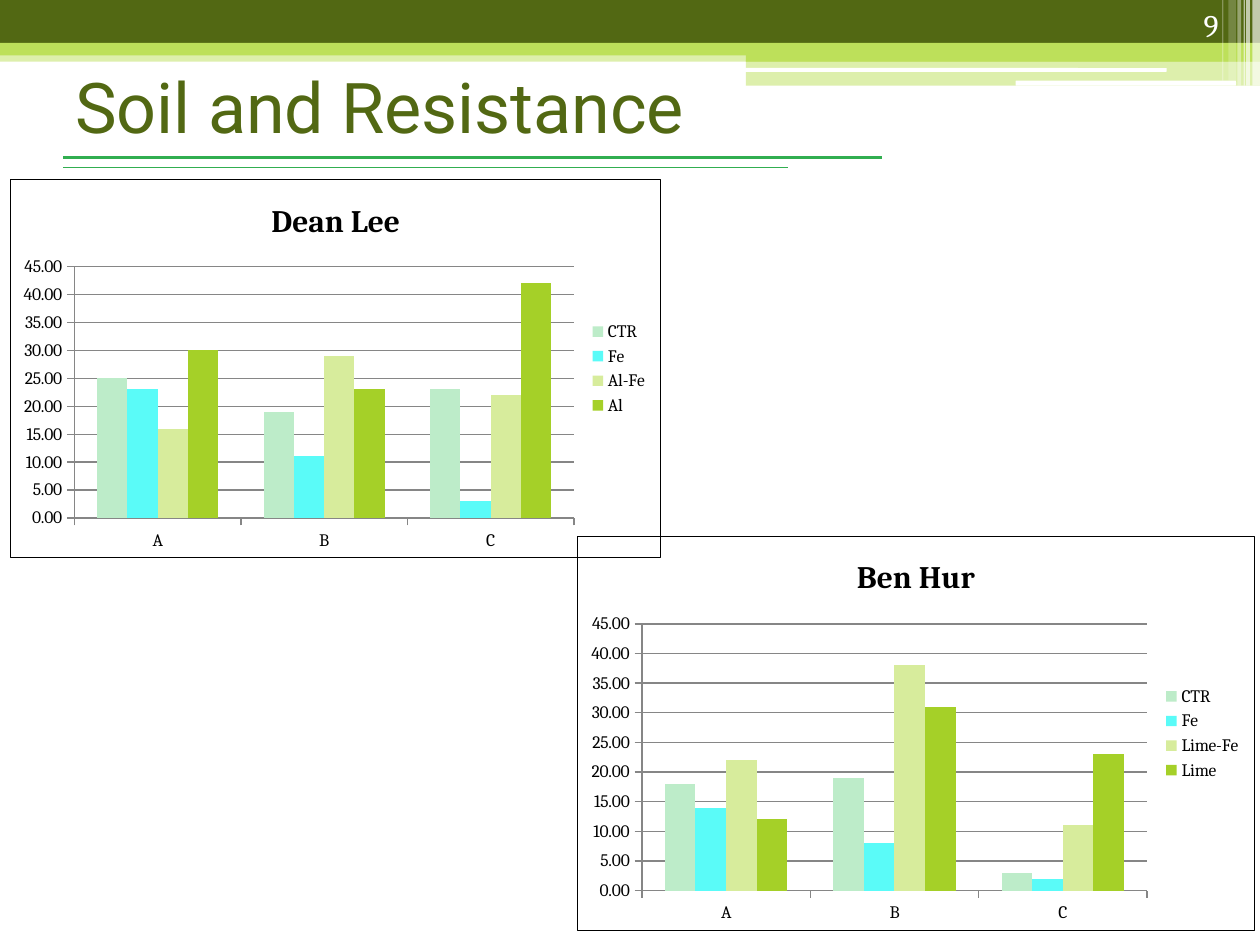
import pptx
import pptx.chart.data
import pptx.dml.color
import pptx.enum.chart
import pptx.enum.shapes
import pptx.enum.text
import pptx.oxml
import pptx.oxml.ns
import pptx.util
from pptx.util import Inches

COLORS = {
    "dark": "526813", "lime": "BDE05A", "white": "FFFFFF", "black": "000000",
    "rule": "31AE50", "axis": "868686",
}
SERIES_COLORS = ["BDECC9", "5AFBF8", "D7EC9C", "A5D028"]
NS = pptx.oxml.ns.nsdecls("a", "c")

# left, top, width, height, colour, opacity in percent
BANDS = [
    (0, 0.4, 10, 0.09, "lime", 50),
    (0, 0, 10, 0.34, "dark", 100),
    (0, 0.34, 10, 0.1, "lime", 100),
    (5.92, 0.39, 4.08, 0.1, "lime", 100),
    (5.92, 0.48, 4.08, 0.2, "lime", 50),
]
SLOTS = [(5.91, 0.54, 3.35, 0.03), (8.06, 0.64, 1.75, 0.04)]
# left, width, height, opacity in percent
STRIPES = [
    (9.94, 0.06, 0.68, 65), (9.89, 0.03, 0.68, 65), (9.87, 0.01, 0.68, 60),
    (9.82, 0.03, 0.68, 40), (9.75, 0.06, 0.64, 20), (9.7, 0.01, 0.64, 30),
]
DEAN_LEE = {
    "CTR": (25, 19, 23),
    "Fe": (23, 11, 3),
    "Al-Fe": (16, 29, 22),
    "Al": (30, 23, 42),
}
BEN_HUR = {
    "CTR": (18, 19, 3),
    "Fe": (14, 8, 2),
    "Lime-Fe": (22, 38, 11),
    "Lime": (12, 31, 23),
}


def rgb(value):
    return pptx.dml.color.RGBColor.from_string(value)


def add_block(s, box, color, opacity=100, rounded=False):
    kinds = pptx.enum.shapes.MSO_SHAPE
    kind = kinds.ROUNDED_RECTANGLE if rounded else kinds.RECTANGLE
    sp = s.shapes.add_shape(kind, *map(Inches, box))
    sp.shadow.inherit = False
    sp.line.fill.background()
    sp.fill.solid()
    sp.fill.fore_color.rgb = rgb(COLORS[color])
    if opacity < 100:
        clr = sp.fill._xPr.find(".//" + pptx.oxml.ns.qn("a:srgbClr"))
        clr.append(pptx.oxml.parse_xml(f'<a:alpha {NS} val="{opacity * 1000}"/>'))


def add_rule(shapes, y, right, width):
    line = shapes.add_connector(pptx.enum.shapes.MSO_CONNECTOR.STRAIGHT,
                                Inches(0.5), Inches(y), Inches(right), Inches(y))
    line.line.color.rgb = rgb(COLORS["rule"])
    line.line.width = pptx.util.Pt(width)
    line._element.spPr.append(pptx.oxml.parse_xml(f"<a:effectLst {NS}/>"))


def add_text(s, box, text, size, font, color, anchor, align):
    tf = s.shapes.add_textbox(*map(Inches, box)).text_frame
    tf.word_wrap = True
    tf.vertical_anchor = anchor
    tf.text = text
    p = tf.paragraphs[0]
    p.alignment = align
    style_font(p.runs[0].font, size, font, color)


def style_font(font, size, name, color):
    font.size = pptx.util.Pt(size)
    font.name = name
    font.color.rgb = rgb(COLORS[color])


def add_border(chart):
    """Outline the chart area, leaving it unfilled."""
    sp_pr = pptx.oxml.parse_xml(
        f'<c:spPr {NS}><a:noFill/><a:ln w="9525"><a:solidFill>'
        f'<a:srgbClr val="{COLORS["black"]}"/></a:solidFill></a:ln></c:spPr>')
    chart._chartSpace.find(pptx.oxml.ns.qn("c:chart")).addnext(sp_pr)


def add_column_chart(s, box, title, series):
    enums = pptx.enum.chart
    data = pptx.chart.data.CategoryChartData(number_format="0.00")
    data.categories = ["A", "B", "C"]
    for name, values in series.items():
        data.add_series(name, values)
    chart = s.shapes.add_chart(enums.XL_CHART_TYPE.COLUMN_CLUSTERED,
                               *map(Inches, box), data).chart
    style_font(chart.font, 10, "Cambria", "black")
    add_border(chart)

    chart.has_title = True
    tf = chart.chart_title.text_frame
    tf.text = title
    font = tf.paragraphs[0].runs[0].font
    style_font(font, 18, "Cambria", "black")
    font.bold = True
    chart.chart_title.include_in_layout = False

    chart.has_legend = True
    chart.legend.position = enums.XL_LEGEND_POSITION.RIGHT
    chart.legend.include_in_layout = False

    values = chart.value_axis
    values.minimum_scale, values.maximum_scale, values.major_unit = 0, 45, 5
    values.tick_labels.number_format = "0.00"
    values.tick_labels.number_format_is_linked = False
    values.has_major_gridlines = True
    for axis in (chart.category_axis, values):
        axis.major_tick_mark = enums.XL_TICK_MARK.OUTSIDE
    for part in (chart.category_axis, values, values.major_gridlines):
        part.format.line.color.rgb = rgb(COLORS["axis"])
        part.format.line.width = pptx.util.Pt(0.75)

    plot = chart.plots[0]
    plot.gap_width = 150
    plot.overlap = 0
    plot.vary_by_categories = False
    for ser, color in zip(plot.series, SERIES_COLORS):
        ser.format.fill.solid()
        ser.format.fill.fore_color.rgb = rgb(color)


def add_header(s):
    for *box, color, opacity in BANDS:
        add_block(s, box, color, opacity)
    for box in SLOTS:
        add_block(s, box, "white", rounded=True)
    for left, width, height, opacity in STRIPES:
        add_block(s, (left, 0, width, height), "white", opacity)


def main():
    prs = pptx.Presentation()
    prs.slide_width, prs.slide_height = Inches(10), Inches(7.5)
    s = prs.slides.add_slide(prs.slide_layouts[6])
    anchors, aligns = pptx.enum.text.MSO_ANCHOR, pptx.enum.text.PP_ALIGN

    add_header(s)
    add_text(s, (0.5, 0.25, 9, 1.17), "Soil and Resistance", 40, "Roboto", "dark",
             anchors.MIDDLE, aligns.LEFT)
    rules = s.shapes.add_group_shape().shapes
    add_rule(rules, 1.25, 7, 2.25)
    add_rule(rules, 1.33, 6.25, 1)
    add_text(s, (8.94, 0, 0.83, 0.4), "9", 18, "Cambria", "white",
             anchors.BOTTOM, aligns.RIGHT)
    add_column_chart(s, (0.08, 1.42, 5.17, 3.01), "Dean Lee", DEAN_LEE)
    add_column_chart(s, (4.58, 4.25, 5.38, 3.14), "Ben Hur", BEN_HUR)
    prs.save("out.pptx")


if __name__ == "__main__":
    main()
